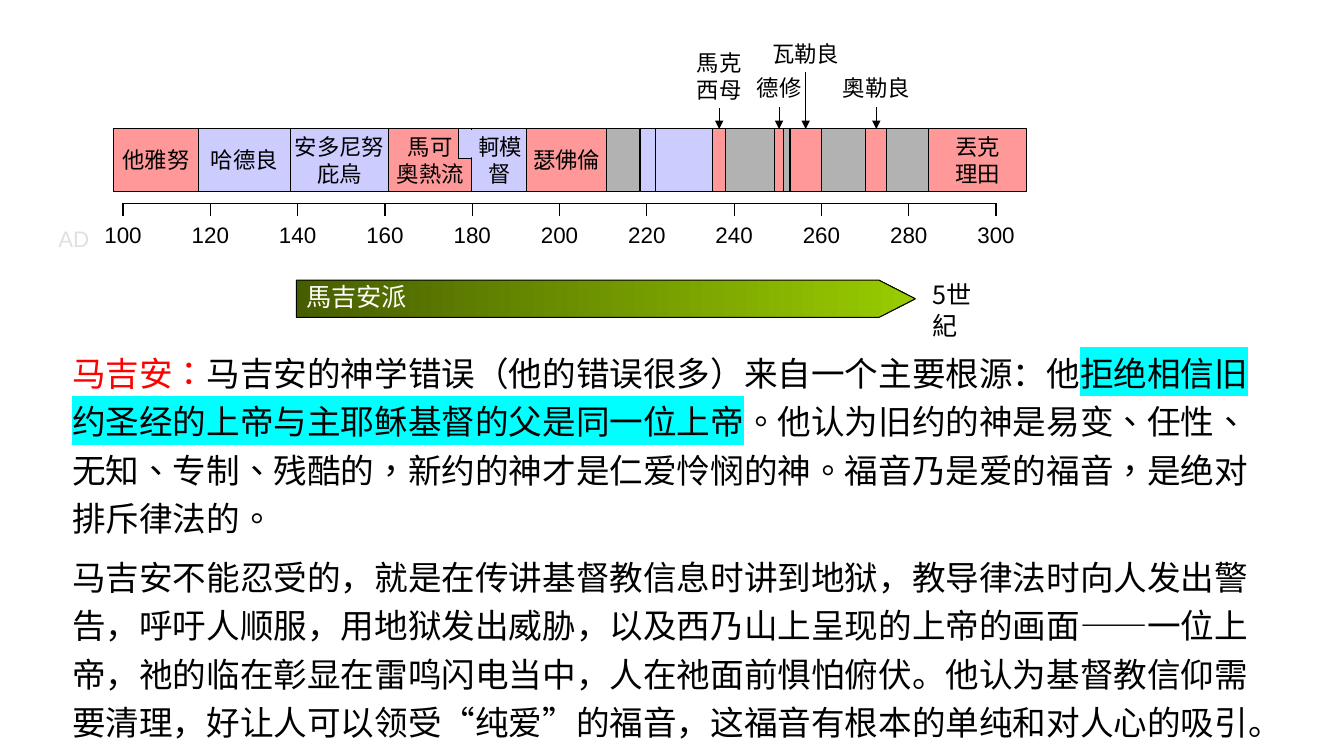
import pptx
import pptx.dml.color
import pptx.enum.dml
import pptx.enum.lang
import pptx.enum.shapes
import pptx.enum.text
import pptx.oxml.ns
import pptx.util
from lxml import etree

Cm, Pt = pptx.util.Cm, pptx.util.Pt
Align, Anchor = pptx.enum.text.PP_ALIGN, pptx.enum.text.MSO_ANCHOR
Shape, Language = pptx.enum.shapes.MSO_SHAPE, pptx.enum.lang.MSO_LANGUAGE_ID
qn = pptx.oxml.ns.qn

COLOURS = {"black": "000000", "white": "FFFFFF", "red": "FF0000",
           "persecutor": "FF9999", "tolerant": "CCCCFF", "minor": "B2B2B2",
           "era": "E0E0E0", "highlight": "00FFFF",
           "dark green": "475E00", "green": "99CC00"}
CJK = "Noto Sans CJK SC"

# Reigns: left edge in cm, colour, name; each ends where the next begins
REIGNS = [(2.87, "persecutor", "他雅努"), (5.0, "tolerant", "哈德良"),
          (7.32, "tolerant", "安多尼努\n庇烏"), (9.8, "persecutor", "馬可\n奧熱流"),
          (11.89, "tolerant", "軻模\n督"), (13.28, "persecutor", "瑟佛倫"),
          (15.29, "minor", ""), (16.13, "tolerant", ""), (16.51, "tolerant", ""),
          (17.96, "persecutor", ""), (18.29, "minor", ""), (19.53, "persecutor", ""),
          (19.74, "minor", ""), (19.91, "persecutor", ""), (20.7, "minor", ""),
          (21.82, "persecutor", ""), (22.35, "minor", ""),
          (23.39, "persecutor", "丟克\n理田")]
REIGNS_END = 25.88

# Callouts: reign index, text, top, width, height in cm
CALLOUTS = [(9, "馬克\n西母", 1.12, 1.75, 1.6), (11, "德修", 1.75, 1.78, 0.95),
            (13, "瓦勒良", 0.89, 2.49, 0.93), (15, "奧勒良", 1.75, 2.21, 0.95)]

# Body: text, language, colour, highlighted
BODY = [
    [("马吉安：", Language.TRADITIONAL_CHINESE, "red", False),
     ("马吉安的神学错误（他的错误很多）来自一个主要根源：他",
      Language.SIMPLIFIED_CHINESE, "black", False),
     ("拒绝相信旧约圣经的上帝与主耶稣基督的父是同一位上帝",
      Language.TRADITIONAL_CHINESE, "black", True),
     ("。他认为旧约的神是易变、任性、无知、专制、残酷的，新约的神才是仁爱怜悯的神。"
      "福音乃是爱的福音，是绝对排斥律法的。", Language.TRADITIONAL_CHINESE, "black", False)],
    [("马吉安不能忍受的，就是在传讲基督教信息时讲到地狱，教导律法时向人发出警告，"
      "呼吁人顺服，用地狱发出威胁，以及西乃山上呈现的上帝的画面——一位上帝，"
      "祂的临在彰显在雷鸣闪电当中，人在祂面前惧怕俯伏。他认为基督教信仰需要清理，"
      "好让人可以领受“纯爱”的福音，这福音有根本的单纯和对人心的吸引。",
      Language.SIMPLIFIED_CHINESE, "black", False)]]


def rgb(name):
    return pptx.dml.color.RGBColor.from_string(COLOURS[name])


def format_paragraph(paragraph, size, colour="black", name="Calibri",
                     align=Align.CENTER, spacing=None):
    font = paragraph.font
    font.size, font.name = Pt(size), name
    font.color.rgb = rgb(colour)
    etree.SubElement(font._element, qn("a:ea")).set("typeface", CJK)
    paragraph.alignment = align
    paragraph.line_spacing = spacing


def write(shape, text, size, spacing=None, wrap=True, **style):
    frame = shape.text_frame
    frame.text = text
    frame.word_wrap = wrap
    for paragraph in frame.paragraphs:
        format_paragraph(paragraph, size, spacing=spacing, **style)


def add_label(slide, left, top, width, height, text, size, **style):
    label = slide.shapes.add_textbox(Cm(left), Cm(top), Cm(width), Cm(height))
    write(label, text, size, **style)
    return label


def add_block(slide, left, top, width, height, colour, outlined=True, kind=Shape.RECTANGLE):
    block = slide.shapes.add_shape(kind, Cm(left), Cm(top), Cm(width), Cm(height))
    block.shadow.inherit = False
    block.fill.solid()
    block.fill.fore_color.rgb = rgb(colour)
    if outlined:
        block.line.color.rgb = rgb("black")
        block.line.width = Pt(0.75)
    else:
        block.line.fill.background()
    return block


def add_row_table(slide, left, top, height, column_width, texts, border, fill=None):
    """One-row table whose cells share a border colour and a fill."""
    frame = slide.shapes.add_table(1, len(texts), Cm(left), Cm(top),
                                   Cm(column_width * len(texts)), Cm(height))
    table = frame.table
    table.first_row = table.horz_banding = False
    for index, text in enumerate(texts):
        table.columns[index].width = Cm(column_width)
        cell = table.cell(0, index)
        cell.margin_top = cell.margin_bottom = 0
        cell.vertical_anchor = Anchor.MIDDLE
        cell.text = text
        format_paragraph(cell.text_frame.paragraphs[0], 16, name="Arial")
        properties = cell._tc.get_or_add_tcPr()
        for side in ("a:lnL", "a:lnR", "a:lnT", "a:lnB"):
            line = etree.SubElement(properties, qn(side), w=str(Pt(1)))
            solid = etree.SubElement(line, qn("a:solidFill"))
            etree.SubElement(solid, qn("a:srgbClr"), val=COLOURS[border])
        if fill:
            cell.fill.solid()
            cell.fill.fore_color.rgb = rgb(fill)
        else:
            cell.fill.background()


def add_axis(slide, left, top, column_width):
    years = [str(year) for year in range(100, 301, 20)]
    add_row_table(slide, left, top, 1.02, column_width, [""] * (len(years) - 1), "black")
    # Year labels are centred under the ticks and hide the lower part of the ruler
    add_row_table(slide, left - column_width / 2, top + 0.33, 0.94, column_width,
                  years, "white", "white")
    add_label(slide, left - 1.88, top + 0.42, 1.3, 0.9, "AD", 16, colour="era",
              name="Arial", align=Align.LEFT, wrap=False)


def add_reigns(slide, top, height):
    edges = [reign[0] for reign in REIGNS] + [REIGNS_END]
    blocks = []
    for (left, colour, name), right in zip(REIGNS, edges[1:]):
        block = add_block(slide, left, top, right - left, height, colour)
        if name:
            write(block, name, 16, Pt(19), wrap=False)
            block.text_frame.vertical_anchor = Anchor.MIDDLE
        blocks.append(block)
    # Shared reign: a notch joined to the fifth block
    add_block(slide, edges[4] - 0.33, top, 0.33, 0.74, "tolerant")
    add_block(slide, edges[4] - 0.05, top + 0.03, 0.25, 0.69, "tolerant", outlined=False)
    return blocks


def add_callouts(slide, blocks):
    for index, text, top, width, height in CALLOUTS:
        block = blocks[index]
        middle = (block.left + block.width / 2) / Cm(1)
        label = add_label(slide, middle - width / 2, top, width, height, text, 16,
                          spacing=Pt(19))
        arrow = slide.shapes.add_connector(pptx.enum.shapes.MSO_CONNECTOR.STRAIGHT, 0, 0, 0, 0)
        arrow.begin_connect(label, 2)
        arrow.end_connect(block, 0)
        arrow.line.color.rgb = rgb("black")
        arrow.line.width = Pt(0.75)
        etree.SubElement(arrow.line._get_or_add_ln(), qn("a:tailEnd"), type="triangle")
        etree.SubElement(arrow._element.spPr, qn("a:effectLst"))


def add_movement(slide, left, top, width, height):
    band = add_block(slide, left, top, width, height, "green", kind=Shape.PENTAGON)
    band.adjustments[0] = 0.977
    band.fill.gradient()
    band.fill.gradient_angle = 0
    for stop, colour in zip(band.fill.gradient_stops, ("dark green", "green")):
        stop.color.rgb = rgb(colour)
    write(band, "馬吉安派", 18, Pt(19), colour="white", align=Align.LEFT)
    band.text_frame.vertical_anchor = Anchor.TOP
    add_label(slide, left + width + 0.18, top - 0.13, 2.1, 1.02, "5世紀", 18,
              spacing=Pt(21.5), name=CJK, align=Align.LEFT)


def add_body(slide, left, top, width, height):
    frame = slide.shapes.add_textbox(Cm(left), Cm(top), Cm(width), Cm(height)).text_frame
    frame.word_wrap = True
    for index, runs in enumerate(BODY):
        paragraph = frame.add_paragraph() if index else frame.paragraphs[0]
        format_paragraph(paragraph, 24, name=CJK, align=Align.LEFT, spacing=Pt(34.6))
        paragraph.space_after = Pt(7.2)
        for text, language, colour, highlighted in runs:
            run = paragraph.add_run()
            run.text = text
            run.font.language_id = language
            run.font.color.rgb = rgb(colour)
            if highlighted:
                mark = etree.SubElement(run.font._element, qn("a:highlight"))
                etree.SubElement(mark, qn("a:srgbClr"), val=COLOURS["highlight"])


def main():
    presentation = pptx.Presentation()
    presentation.slide_width, presentation.slide_height = Cm(33.87), Cm(19.05)
    slide = presentation.slides.add_slide(presentation.slide_layouts[6])
    add_axis(slide, 3.1, 5.13, 2.2)
    blocks = add_reigns(slide, 3.25, 1.57)
    add_callouts(slide, blocks)
    add_body(slide, 1.57, 8.56, 30.58, 10.26)
    add_movement(slide, 7.47, 7.06, 15.6, 0.94)
    presentation.save("out.pptx")


if __name__ == "__main__":
    main()
